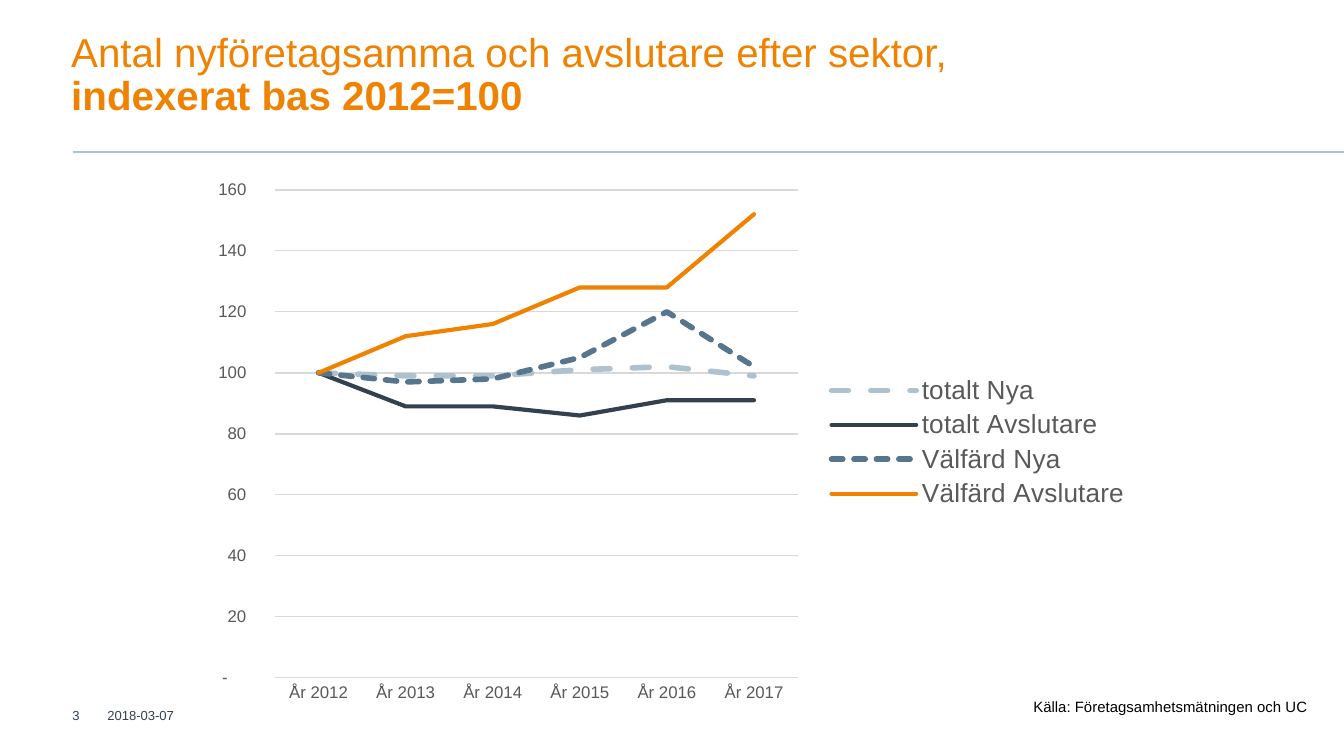
from lxml import etree
from pptx import Presentation
from pptx.chart.data import CategoryChartData
from pptx.dml.color import RGBColor
from pptx.enum.chart import XL_CHART_TYPE, XL_LEGEND_POSITION, XL_MARKER_STYLE, XL_TICK_MARK
from pptx.enum.dml import MSO_LINE
from pptx.enum.shapes import MSO_CONNECTOR
from pptx.enum.text import MSO_ANCHOR, PP_ALIGN
from pptx.oxml import parse_xml
from pptx.oxml.ns import nsdecls, qn
from pptx.util import Inches, Pt

NO_TICK = XL_TICK_MARK.NONE
NO_MARKER = XL_MARKER_STYLE.NONE
SOLID, DASH, SYS_DASH = MSO_LINE.SOLID, MSO_LINE.DASH, MSO_LINE.SQUARE_DOT
LEFT, BOTTOM, MIDDLE = PP_ALIGN.LEFT, MSO_ANCHOR.BOTTOM, MSO_ANCHOR.MIDDLE
STRAIGHT = MSO_CONNECTOR.STRAIGHT
COLORS = {"orange": "EF8200", "navy": "33414E", "steel": "57758D", "mist": "AEC1CF",
          "label": "595959", "grid": "D9D9D9", "black": "000000"}


def style_font(font, size, color):
    font.name = "Arial"
    font.size = Pt(size)
    font.color.rgb = RGBColor.from_string(COLORS[color])


def manual_layout(x, y, w, h, inner=False):
    """Return a chart layout element placed by fractions of the chart area."""
    target = '<c:layoutTarget val="inner"/>' if inner else ""
    places = "".join(f'<c:{tag} val="{value}"/>' for tag, value in (
        ("xMode", "edge"), ("yMode", "edge"), ("x", x), ("y", y), ("w", w), ("h", h)))
    return parse_xml(f'<c:layout {nsdecls("c")}><c:manualLayout>'
                     f'{target}{places}</c:manualLayout></c:layout>')


prs = Presentation()
prs.slide_width = Inches(10)
prs.slide_height = prs.slide_width * 9 // 16
slide = prs.slides.add_slide(prs.slide_layouts[5])

# Title and rule
title = slide.shapes.title
title.left, title.top = Inches(0.53), Inches(0.27)
title.width, title.height = Inches(7.16), Inches(0.67)
frame = title.text_frame
frame.word_wrap = True
frame.vertical_anchor = BOTTOM
frame.margin_left = frame.margin_top = 0
frame.margin_right, frame.margin_bottom = Inches(0.1), Inches(0.05)
heading = frame.paragraphs[0]
heading.alignment = LEFT
heading.line_spacing = 0.9
style_font(heading.font, 21.6, "orange")
heading.add_run().text = "Antal nyföretagsamma och avslutare efter sektor, "
basis = heading.add_run()
basis.text = "indexerat bas 2012=100"
basis.font.bold = True

rule = slide.shapes.add_connector(STRAIGHT, Inches(0.54), Inches(1.13), Inches(10), Inches(1.13))
rule.line.color.rgb = RGBColor.from_string(COLORS["mist"])
rule.line.width = Pt(1)
etree.SubElement(rule._element.spPr, qn("a:effectLst"))

# Index chart
SERIES = [
    ("totalt Nya", (100, 99, 99, 101, 102, 99), "mist", 3, DASH),
    ("totalt Avslutare", (100, 89, 89, 86, 91, 91), "navy", 2.25, SOLID),
    ("Välfärd Nya", (100, 97, 98, 105, 120, 102), "steel", 3, SYS_DASH),
    ("Välfärd Avslutare", (100, 112, 116, 128, 128, 152), "orange", 2.25, SOLID),
]
index_data = CategoryChartData()
index_data.categories = [f"År {year}" for year in range(2012, 2018)]
for name, values, *_ in SERIES:
    index_data.add_series(name, values)
chart = slide.shapes.add_chart(XL_CHART_TYPE.LINE, Inches(1.41), Inches(1.25),
                               Inches(7.07), Inches(4.08), index_data).chart
chart.has_title = False
style_font(chart.font, 10, "black")
chart.plots[0].vary_by_categories = False
for series, (_, _, color, width, dash) in zip(chart.plots[0].series, SERIES):
    series.smooth = False
    series.marker.style = NO_MARKER
    line = series.format.line
    line.color.rgb = RGBColor.from_string(COLORS[color])
    line.width = Pt(width)
    line.dash_style = dash
    series._element.spPr.find(qn("a:ln")).set("cap", "rnd")

years, index = chart.category_axis, chart.value_axis
for axis in (years, index):
    axis.major_tick_mark = axis.minor_tick_mark = NO_TICK
    style_font(axis.tick_labels.font, 9, "label")
index.minimum_scale, index.maximum_scale, index.major_unit = 0, 160, 20
index.format.line.fill.background()
for line in (years.format.line, index.major_gridlines.format.line):
    line.color.rgb = RGBColor.from_string(COLORS["grid"])
    line.width = Pt(0.75)
index.tick_labels.number_format = (
    r'_-* #\ ##0\ _k_r_-;\-* #\ ##0\ _k_r_-;_-* "-"??\ _k_r_-;_-@_-')
index.tick_labels.number_format_is_linked = False

chart.has_legend = True
legend = chart.legend
legend.position = XL_LEGEND_POSITION.RIGHT
legend.include_in_layout = False
style_font(legend.font, 14, "label")
for layout in legend._element.findall(qn("c:layout")):
    legend._element.remove(layout)
legend._element.find(qn("c:legendPos")).addnext(manual_layout(0.67, 0.37, 0.32, 0.26))
plot_area = chart._chartSpace.chart.plotArea
for layout in plot_area.findall(qn("c:layout")):
    plot_area.remove(layout)
plot_area.insert(0, manual_layout(0.09, 0.04, 0.55, 0.89, inner=True))

# Footer and source
for text, left, top, width, height, margin, size, color, wrap in (
        ("2018-03-07", 0.8, 5.26, 0.6, 0.13, 0, 7, "navy", True),
        ("3", 0.44, 5.26, 0.35, 0.13, 0.1, 7, "navy", True),
        ("Källa: Företagsamhetsmätningen och UC", 7.59, 5.14, 2.27, 0.24, 0.1, 8, "black", False)):
    note = slide.shapes.add_textbox(Inches(left), Inches(top), Inches(width), Inches(height))
    frame = note.text_frame
    frame.word_wrap = wrap
    frame.vertical_anchor = MIDDLE
    frame.margin_left = frame.margin_right = Inches(margin)
    frame.text = text
    style_font(frame.paragraphs[0].font, size, color)

prs.save("out.pptx")
